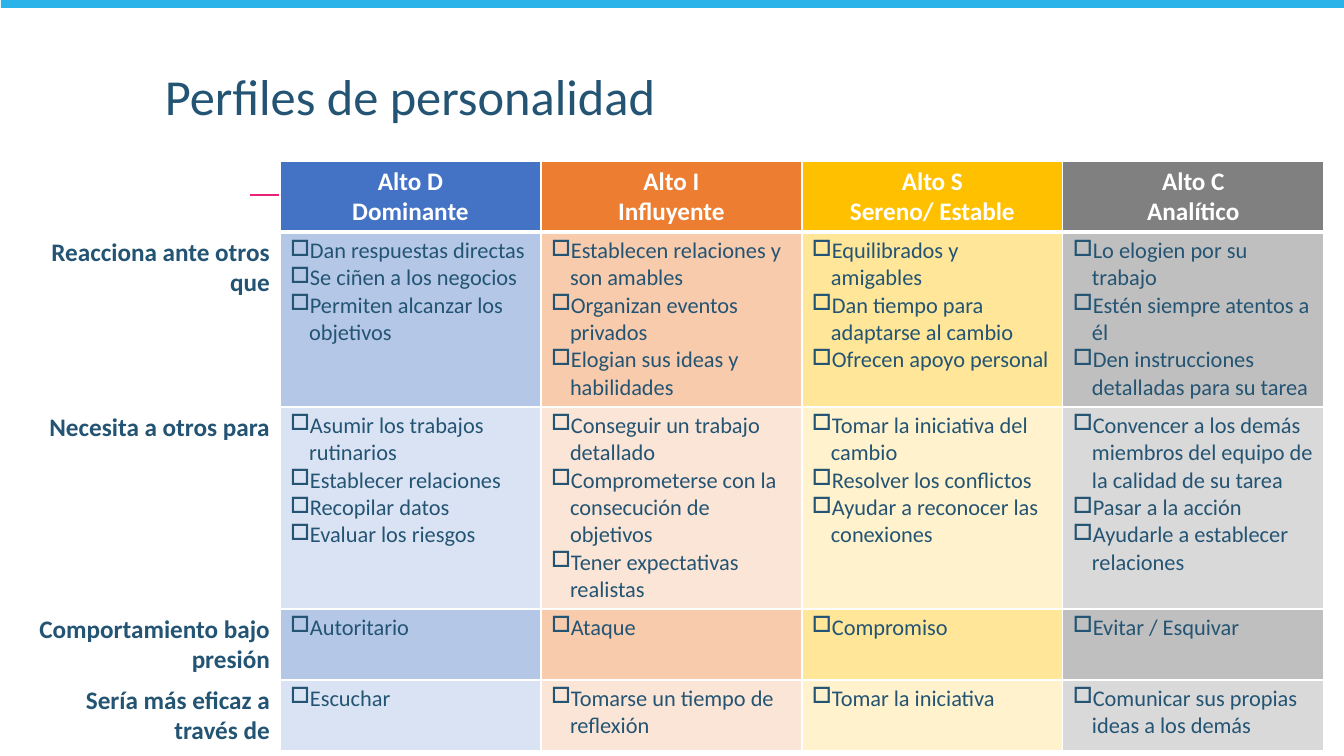
"""Build the slide that compares the four personality profiles."""
from dataclasses import dataclass

from lxml import etree
from pptx import Presentation
from pptx.dml.color import RGBColor
from pptx.enum.shapes import MSO_CONNECTOR, MSO_SHAPE
from pptx.enum.text import MSO_ANCHOR, PP_ALIGN
from pptx.oxml.ns import qn
from pptx.util import Emu, Pt

STRAIGHT = MSO_CONNECTOR.STRAIGHT
RECTANGLE = MSO_SHAPE.RECTANGLE
TOP = MSO_ANCHOR.TOP
LEFT, CENTER, RIGHT = PP_ALIGN.LEFT, PP_ALIGN.CENTER, PP_ALIGN.RIGHT

EMU_PER_PX = 914400 / 100.8
FONT_NAME = "Calibri"
WHITE = RGBColor(0xFF, 0xFF, 0xFF)
NAVY = RGBColor(0x24, 0x54, 0x73)
SKY = RGBColor(0x29, 0xB3, 0xE8)
PINK = RGBColor(0xEC, 0x21, 0x79)
BLUE = RGBColor(0x44, 0x72, 0xC4)
BLUE_MID = RGBColor(0xB4, 0xC7, 0xE7)
BLUE_PALE = RGBColor(0xDA, 0xE3, 0xF3)
ORANGE = RGBColor(0xED, 0x7D, 0x31)
ORANGE_MID = RGBColor(0xF8, 0xCB, 0xAD)
ORANGE_PALE = RGBColor(0xFB, 0xE5, 0xD6)
GOLD = RGBColor(0xFF, 0xC0, 0x00)
GOLD_MID = RGBColor(0xFF, 0xE6, 0x99)
GOLD_PALE = RGBColor(0xFF, 0xF2, 0xCC)
GRAY = RGBColor(0x80, 0x80, 0x80)
GRAY_MID = RGBColor(0xBF, 0xBF, 0xBF)
GRAY_PALE = RGBColor(0xD9, 0xD9, 0xD9)

COLUMN_WIDTH = 261
ROW_HEIGHTS = (71, 175, 202, 71, 71)
BULLET_INDENT = 19
ROW_LABELS = (
    "Reacciona ante otros que",
    "Necesita a otros para",
    "Comportamiento bajo presión",
    "Sería más eficaz a través de",
)


@dataclass(frozen=True)
class Profile:
    """A table column: heading lines, colours and one item list per row."""

    heading: tuple[str, str]
    header_fill: RGBColor
    band_fills: tuple[RGBColor, RGBColor]
    items: tuple[tuple[str, ...], ...]


PROFILES = (
    Profile(("Alto D", "Dominante"), BLUE, (BLUE_MID, BLUE_PALE), (
        ("Dan respuestas directas", "Se ciñen a los negocios",
         "Permiten alcanzar los objetivos"),
        ("Asumir los trabajos rutinarios", "Establecer relaciones",
         "Recopilar datos", "Evaluar los riesgos"),
        ("Autoritario",),
        ("Escuchar",),
    )),
    Profile(("Alto I", "Influyente"), ORANGE, (ORANGE_MID, ORANGE_PALE), (
        ("Establecen relaciones y son amables", "Organizan eventos privados",
         "Elogian sus ideas y habilidades"),
        ("Conseguir un trabajo detallado",
         "Comprometerse con la consecución de objetivos",
         "Tener expectativas realistas"),
        ("Ataque",),
        ("Tomarse un tiempo de reflexión",),
    )),
    Profile(("Alto S", "Sereno/ Estable"), GOLD, (GOLD_MID, GOLD_PALE), (
        ("Equilibrados y amigables", "Dan tiempo para adaptarse al cambio",
         "Ofrecen apoyo personal"),
        ("Tomar la iniciativa del cambio", "Resolver los conflictos",
         "Ayudar a reconocer las conexiones"),
        ("Compromiso",),
        ("Tomar la iniciativa",),
    )),
    Profile(("Alto C", "Analítico"), GRAY, (GRAY_MID, GRAY_PALE), (
        ("Lo elogien por su trabajo", "Estén siempre atentos a él",
         "Den instrucciones detalladas para su tarea"),
        ("Convencer a los demás miembros del equipo de la calidad de su tarea",
         "Pasar a la acción", "Ayudarle a establecer relaciones"),
        ("Evitar / Esquivar",),
        ("Comunicar sus propias ideas a los demás",),
    )),
)


def px(length: int) -> Emu:
    """Turn whole pixels into EMU."""
    return Emu(round(length * EMU_PER_PX))


def add_run(paragraph, text: str, size: int, color: RGBColor, bold: bool = False) -> None:
    """Append one formatted run to a paragraph."""
    run = paragraph.add_run()
    run.text = text
    run.font.name = FONT_NAME
    run.font.size = Pt(size)
    run.font.bold = bold
    run.font.color.rgb = color


def add_bullet(paragraph) -> None:
    """Give a paragraph a hanging square bullet."""
    properties = paragraph._p.get_or_add_pPr()
    properties.set("marL", str(px(BULLET_INDENT)))
    properties.set("indent", str(-px(BULLET_INDENT)))
    etree.SubElement(properties, qn("a:buChar")).set("char", "□")


def add_borders(cell, bottom_points: int) -> None:
    """Draw white borders around a cell."""
    properties = cell._tc.get_or_add_tcPr()
    for side, points in (("L", 1), ("R", 1), ("T", 1), ("B", bottom_points)):
        line = etree.SubElement(properties, qn(f"a:ln{side}"), w=str(Pt(points)))
        fill = etree.SubElement(line, qn("a:solidFill"))
        etree.SubElement(fill, qn("a:srgbClr"), val=str(WHITE))


def fill_cell(cell, color: RGBColor) -> None:
    """Set the solid fill of a cell."""
    cell.fill.solid()
    cell.fill.fore_color.rgb = color


def write_heading(cell, profile: Profile) -> None:
    """Write the two-line heading of a profile."""
    fill_cell(cell, profile.header_fill)
    paragraph = cell.text_frame.paragraphs[0]
    paragraph.alignment = CENTER
    first, second = profile.heading
    add_run(paragraph, first, 18, WHITE, bold=True)
    paragraph.add_line_break()
    add_run(paragraph, second, 18, WHITE, bold=True)


def write_label(cell, label: str) -> None:
    """Write the label at the start of a row."""
    fill_cell(cell, WHITE)
    paragraph = cell.text_frame.paragraphs[0]
    paragraph.alignment = RIGHT
    add_run(paragraph, label, 18, NAVY, bold=True)


def write_items(cell, items: tuple[str, ...], color: RGBColor) -> None:
    """Write a bulleted list in a cell."""
    fill_cell(cell, color)
    frame = cell.text_frame
    for index, item in enumerate(items):
        paragraph = frame.add_paragraph() if index else frame.paragraphs[0]
        paragraph.alignment = LEFT
        add_bullet(paragraph)
        add_run(paragraph, item, 16, NAVY)


def add_decoration(slide) -> None:
    """Draw the top bar and the pink rule."""
    rule = slide.shapes.add_connector(STRAIGHT, px(1316), px(195), px(250), px(195))
    rule.line.color.rgb = PINK
    rule.line.width = Pt(1.5)
    etree.SubElement(rule._element.spPr, qn("a:effectLst"))
    bar = slide.shapes.add_shape(RECTANGLE, px(1), px(-2), px(1344), px(10))
    bar.shadow.inherit = False
    bar.fill.solid()
    bar.fill.fore_color.rgb = SKY
    bar.line.fill.background()


def add_title(slide) -> None:
    """Write the slide title."""
    frame = slide.shapes.add_textbox(px(155), px(67), px(984), px(77)).text_frame
    frame.word_wrap = True
    frame.vertical_anchor = TOP
    paragraph = frame.paragraphs[0]
    paragraph.line_spacing = 0.9
    add_run(paragraph, "Perfiles de personalidad", 36, NAVY)


def add_profile_table(slide) -> None:
    """Draw the table of profiles."""
    column_count = len(PROFILES) + 1
    table = slide.shapes.add_table(
        len(ROW_HEIGHTS), column_count, px(19), px(161),
        px(COLUMN_WIDTH * column_count), px(sum(ROW_HEIGHTS))).table
    table.first_row = table.horz_banding = False
    for column in table.columns:
        column.width = px(COLUMN_WIDTH)
    for index, height in enumerate(ROW_HEIGHTS):
        table.rows[index].height = px(height)
        for cell in table.rows[index].cells:
            add_borders(cell, 1 if index else 3)
    table.cell(0, 0).fill.background()
    for row, label in enumerate(ROW_LABELS, 1):
        write_label(table.cell(row, 0), label)
    for column, profile in enumerate(PROFILES, 1):
        write_heading(table.cell(0, column), profile)
        for row, items in enumerate(profile.items):
            write_items(table.cell(row + 1, column), items, profile.band_fills[row % 2])


def main() -> None:
    """Build and save the presentation."""
    presentation = Presentation()
    presentation.slide_width, presentation.slide_height = px(1344), px(756)
    slide = presentation.slides.add_slide(presentation.slide_layouts[6])
    add_decoration(slide)
    add_title(slide)
    add_profile_table(slide)
    presentation.save("out.pptx")


if __name__ == "__main__":
    main()
